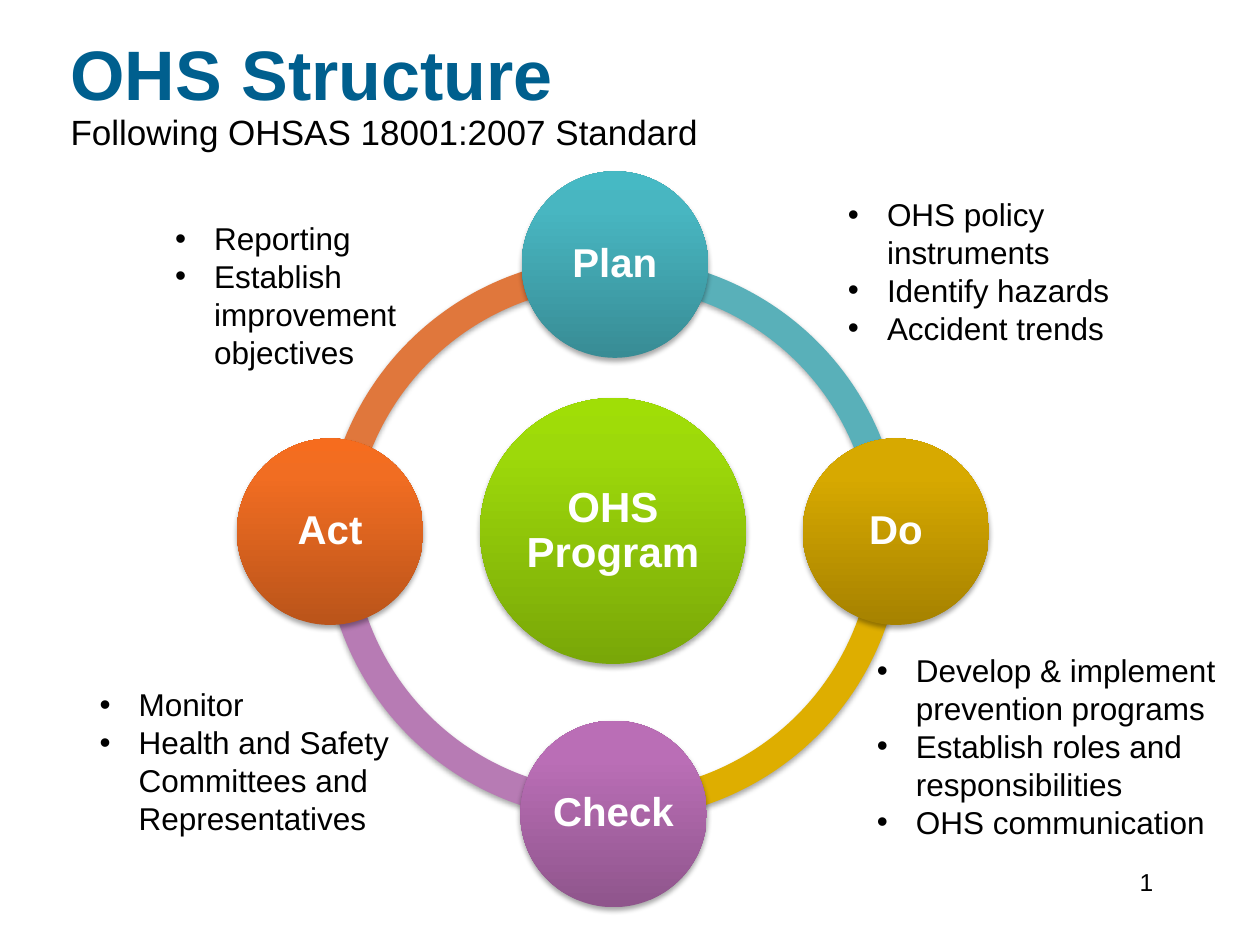
import copy

import pptx
import pptx.dml.color
import pptx.enum.shapes
import pptx.enum.text
import pptx.oxml
import pptx.oxml.ns
import pptx.util
from pptx.util import Inches

RGBColor = pptx.dml.color.RGBColor
Align = pptx.enum.text.PP_ALIGN
Anchor = pptx.enum.text.MSO_ANCHOR
Shape = pptx.enum.shapes.MSO_SHAPE
qn = pptx.oxml.ns.qn

BLACK = RGBColor(0x00, 0x00, 0x00)
WHITE = RGBColor(0xFF, 0xFF, 0xFF)
TITLE_BLUE = RGBColor(0x00, 0x5F, 0x8E)
ARC_ORANGE = RGBColor(0xE0, 0x77, 0x3C)
ARC_PURPLE = RGBColor(0xB7, 0x7B, 0xB4)
ARC_GOLD = RGBColor(0xDE, 0xAE, 0x00)
ARC_TEAL = RGBColor(0x59, 0xB0, 0xB9)
GREENS = RGBColor(0x79, 0xA7, 0x08), RGBColor(0x9D, 0xD9, 0x0A), RGBColor(0xA0, 0xDE, 0x06)
TEALS = RGBColor(0x38, 0x8C, 0x95), RGBColor(0x48, 0xB6, 0xC1), RGBColor(0x46, 0xB9, 0xC4)
GOLDS = RGBColor(0xA6, 0x82, 0x00), RGBColor(0xD7, 0xA9, 0x00), RGBColor(0xD8, 0xA9, 0x00)
PURPLES = RGBColor(0x8F, 0x55, 0x8C), RGBColor(0xBA, 0x6E, 0xB6), RGBColor(0xBC, 0x6E, 0xB8)
ORANGES = RGBColor(0xBA, 0x54, 0x1A), RGBColor(0xF1, 0x6D, 0x22), RGBColor(0xF6, 0x6C, 0x1E)

NAMESPACE = pptx.oxml.ns.nsdecls("a")
SHADOW = (
    f'<a:effectLst {NAMESPACE}><a:outerShdw blurRad="39370" dist="22860" dir="5400000" '
    'rotWithShape="0"><a:srgbClr val="000000"><a:alpha val="35000"/></a:srgbClr>'
    "</a:outerShdw></a:effectLst>"
)
BULLET = f'<a:buChar {NAMESPACE} char="•"/>'
BULLET_FONT = f'<a:buFont {NAMESPACE} typeface="Arial"/>'
NUMBER_FIELD = (
    f'<a:fld {NAMESPACE} id="{{B6F15528-21DE-4FAA-801E-634DDDAF4B2B}}" type="slidenum">'
    '<a:rPr lang="en-US" sz="1400"><a:solidFill><a:srgbClr val="000000"/></a:solidFill>'
    '<a:latin typeface="Arial"/></a:rPr><a:t>4</a:t></a:fld>'
)


class CycleSlide:
    font_name = "Arial"

    def __init__(self, page):
        self.page = page

    def style(self, font, size, color, bold=False):
        font.name = self.font_name
        font.size = pptx.util.Pt(size)
        font.color.rgb = color
        font.bold = bold

    def place(self, shape, left, top, width, height):
        shape.left, shape.top = Inches(left), Inches(top)
        shape.width, shape.height = Inches(width), Inches(height)

    def title(self, heading, subtitle):
        box = self.page.shapes.title
        self.place(box, 0.46, 0.14, 9, 1.25)
        frame = box.text_frame
        frame.text = f"{heading}\v{subtitle}"
        frame.vertical_anchor = Anchor.MIDDLE
        para = frame.paragraphs[0]
        para.alignment = Align.LEFT
        para.line_spacing = 0.9
        heading_span, subtitle_span = para.runs
        self.style(heading_span.font, 40, TITLE_BLUE, True)
        self.style(subtitle_span.font, 20, BLACK)

    def bullets(self, index, items, left, top, width, height):
        box = self.page.placeholders[index]
        self.page.shapes._spTree.append(box._element)
        self.place(box, left, top, width, height)
        frame = box.text_frame
        frame.text = "\n".join(items)
        frame.word_wrap = True
        frame.vertical_anchor = Anchor.TOP
        frame.auto_size = pptx.enum.text.MSO_AUTO_SIZE.SHAPE_TO_FIT_TEXT
        for para in frame.paragraphs:
            properties = para._p.get_or_add_pPr()
            properties.set("marL", str(Inches(0.31)))
            properties.set("indent", str(-Inches(0.31)))
            for markup in (BULLET_FONT, BULLET):
                properties.append(pptx.oxml.parse_xml(markup))
            para.space_before = pptx.util.Pt(0)
            for span in para.runs:
                self.style(span.font, 18, BLACK)

    def drawn_shape(self, kind, left, top, size):
        shape = self.page.shapes.add_shape(
            kind, Inches(left), Inches(top), Inches(size), Inches(size))
        shape.line.fill.background()
        shape._element.spPr.append(pptx.oxml.parse_xml(SHADOW))
        return shape

    def arc(self, top, start, end, color):
        arc = self.drawn_shape(Shape.BLOCK_ARC, 2.57, top, 4.59)
        for position, value in enumerate((start, end, 0.05)):
            arc.adjustments[position] = value
        arc.fill.solid()
        arc.fill.fore_color.rgb = color

    def circle(self, label, left, top, size, text_size, colors):
        circle = self.drawn_shape(Shape.OVAL, left, top, size)
        circle.fill.gradient()
        circle.fill.gradient_angle = 90
        stop_list = circle._element.spPr.find(qn("a:gradFill")).find(qn("a:gsLst"))
        stop_list.insert(1, copy.deepcopy(stop_list[0]))
        for stop, position, color in zip(circle.fill.gradient_stops, (0, 0.8, 1), colors):
            stop.position = position
            stop.color.rgb = color
        frame = circle.text_frame
        frame.text = label
        frame.word_wrap = True
        frame.vertical_anchor = Anchor.MIDDLE
        frame.margin_left = frame.margin_right = Inches(0.03)
        frame.margin_top = frame.margin_bottom = Inches(0.03)
        para = frame.paragraphs[0]
        para.alignment = Align.CENTER
        para.line_spacing = 0.9
        self.style(para.runs[0].font, text_size, WHITE, True)

    def page_number(self):
        box = self.page.shapes.add_textbox(
            Inches(7.17), Inches(6.83), Inches(2.08), Inches(0.5))
        box.text_frame.word_wrap = True
        para = box.text_frame.paragraphs[0]
        para.alignment = Align.RIGHT
        para._p.append(pptx.oxml.parse_xml(NUMBER_FIELD))


def main():
    deck = pptx.Presentation()
    deck.slide_width, deck.slide_height = Inches(10), Inches(7.5)
    slide = CycleSlide(deck.slides.add_slide(deck.slide_layouts.get_by_name("Comparison")))
    slide.title("OHS Structure", "Following OHSAS 18001:2007 Standard")
    slide.page_number()

    for arc in (
        (2.04, 109.84, 162.26, ARC_ORANGE),
        (1.92, 54, 108, ARC_PURPLE),
        (1.92, 0, 54, ARC_GOLD),
        (2.04, 162.16, 214.16, ARC_TEAL),
    ):
        slide.arc(*arc)

    slide.circle("OHS Program", 3.81, 3.16, 2.11, 24, GREENS)
    for label, left, top, colors in (
        ("Plan", 4.14, 1.36, TEALS),
        ("Do", 6.37, 3.48, GOLDS),
        ("Check", 4.13, 5.72, PURPLES),
        ("Act", 1.88, 3.48, ORANGES),
    ):
        slide.circle(label, left, top, 1.48, 23, colors)

    lists = (
        (("OHS policy instruments", "Identify hazards", "Accident trends"),
         6.63, 1.5, 2.28, 1.31),
        (("Monitor", "Health and Safety Committees and Representatives"),
         0.69, 5.39, 3, 1.31),
        (("Develop & implement prevention programs",
          "Establish roles and responsibilities", "OHS communication"),
         6.86, 5.12, 3, 1.62),
        (("Reporting", "Establish improvement objectives"),
         1.29, 1.69, 2.6, 1.31),
    )
    for index, entry in enumerate(lists, start=1):
        slide.bullets(index, *entry)
    deck.save("out.pptx")


if __name__ == "__main__":
    main()
